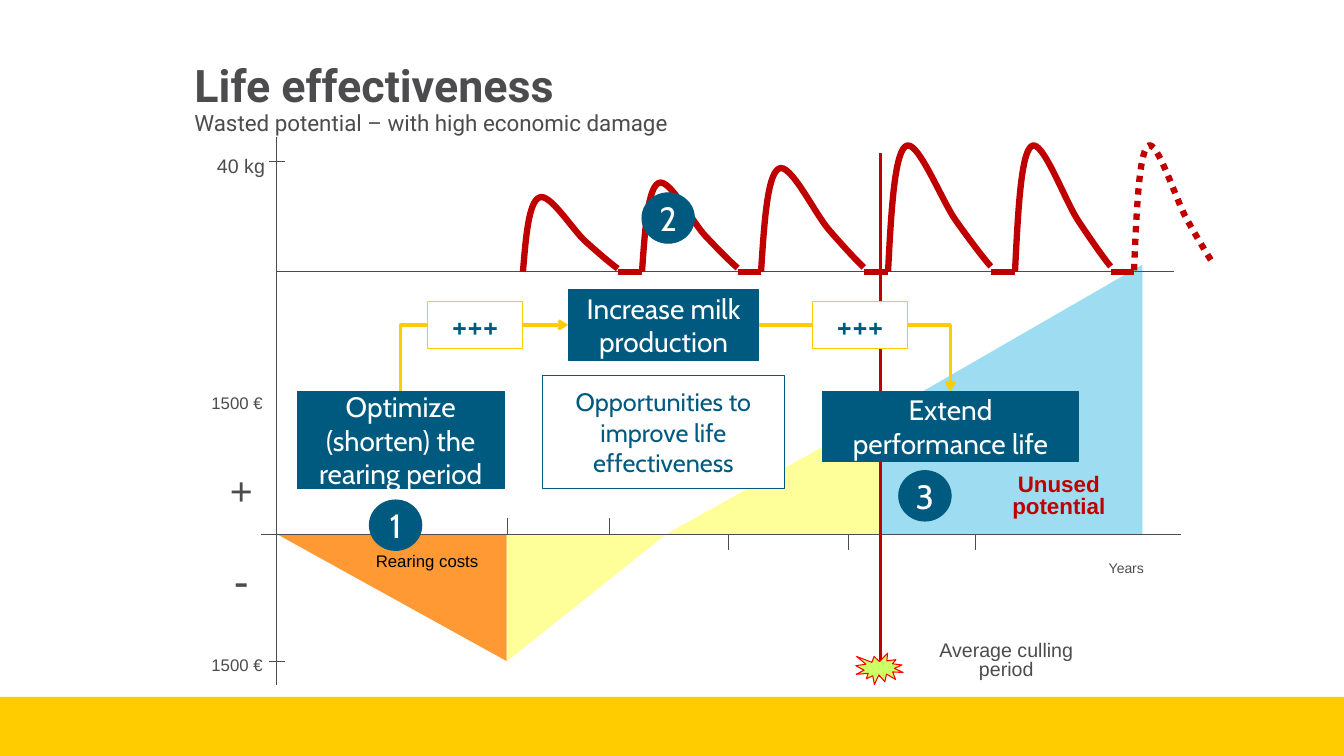
"""Build the life effectiveness slide for dairy cows."""
from lxml.etree import SubElement
from pptx import Presentation
from pptx.dml.color import RGBColor
from pptx.enum.dml import MSO_LINE as Dash
from pptx.enum.shapes import MSO_CONNECTOR as Link, MSO_SHAPE as Shape
from pptx.enum.text import MSO_ANCHOR as Anchor, PP_ALIGN as Align
from pptx.oxml.ns import qn
from pptx.util import Cm, Pt

GREY, RED, BLUE, GOLD, WHITE = "4C4C4E", "C00000", "005A7F", "FFCC00", "FFFFFF"
rgb = RGBColor.from_string

deck = Presentation()
deck.slide_width, deck.slide_height = Cm(33.87), Cm(19.05)
page = deck.slides.add_slide(deck.slide_layouts[6])


def write(shape, text, size, color, font="Arial", bold=False, align=Align.CENTER,
          anchor=Anchor.TOP, spacing=None):
    frame = shape.text_frame
    frame.word_wrap = True
    frame.vertical_anchor = anchor
    para = frame.paragraphs[0]
    para.alignment, para.line_spacing = align, spacing
    span = para.add_run()
    span.text = text
    span.font.name, span.font.size, span.font.bold = font, Pt(size), bold
    span.font.color.rgb = rgb(color)
    return para


def draw_line(x1, y1, x2, y2, color=GREY, width=0.75, kind=Link.STRAIGHT):
    line = page.shapes.add_connector(kind, Cm(x1), Cm(y1), Cm(x2), Cm(y2))
    line.line.color.rgb, line.line.width = rgb(color), Pt(width)
    SubElement(line._element.spPr, qn("a:effectLst"))
    return line


milk_axis, money_axis, left_axis = 6.85, 13.46, 6.98

band = page.shapes.add_shape(Shape.RECTANGLE, 0, Cm(17.56), Cm(33.87), Cm(1.49))
band.shadow.inherit = False
band.fill.solid()
band.fill.fore_color.rgb = rgb(GOLD)
band.line.fill.background()

draw_line(left_axis, 3.45, left_axis, 17.25)
draw_line(left_axis, money_axis, 29.77, money_axis)
for x in (9.98, 12.78, 15.37, 18.37, 21.39, 24.59):
    draw_line(x, 13.06, x, 13.87)

for x, y, width, height, turn, color in (
    (6.98, 13.46, 5.79, 3.2, 180, "FF9933"),
    (13.18, 13.06, 3.2, 4.01, 90, "FFFF99"),
    (19.48, 4.17, 6.81, 11.81, 270, "9EDCF1"),
    (17.98, 9.27, 3, 5.38, 270, "FFFF99"),
):
    area = page.shapes.add_shape(Shape.RIGHT_TRIANGLE, Cm(x), Cm(y), Cm(width), Cm(height))
    area.rotation = turn
    area.shadow.inherit = False
    area.fill.solid()
    area.fill.fore_color.rgb = rgb(color)
    area.line.fill.background()

draw_line(left_axis, milk_axis, 29.58, milk_axis)
draw_line(6.58, money_axis, 29.77, money_axis)
for y in (4.06, 16.66):
    draw_line(6.78, y, 7.17, y)

profile = [(0.03, 0.43), (0.06, 0.87), (0.17, 0.93), (0.28, 1),
           (0.52, 0.53), (0.66, 0.38), (0.8, 0.23), (0.94, 0.09), (1, 0.04)]
lactations = [(13.18, 2.39, 2.01), (16.18, 2.41, 2.4), (19.18, 2.59, 2.79),
              (22.38, 2.59, 3.4), (25.58, 2.41, 3.4), (28.58, 2.02, 3.36)]
for x, width, height in lactations:
    last = x == lactations[-1][0]
    base = 6.81 if last else milk_axis
    builder = page.shapes.build_freeform(Cm(x), Cm(base))
    builder.add_line_segments([(Cm(x + width * along), Cm(base - height * up))
                               for along, up in profile], close=False)
    curve = builder.convert_to_shape()
    outline = next(curve._element.iter(qn("a:path")))
    segments = outline.findall(qn("a:lnTo"))
    for first in range(0, len(segments), 3):
        bezier = SubElement(outline, qn("a:cubicBezTo"))
        for segment in segments[first:first + 3]:
            bezier.append(segment[0])
            outline.remove(segment)
    curve.shadow.inherit = False
    curve.fill.background()
    curve.line.color.rgb, curve.line.width = rgb(RED), Pt(4.5)
    if last:
        curve.line.dash_style = Dash.ROUND_DOT

for (x, width, height), following in zip(lactations, lactations[1:]):
    draw_line(x + width, milk_axis, following[0], milk_axis, RED, 4.5)
draw_line(22.18, 3.86, 22.18, 17.07, RED, 2.25)

for text, x, y, width, height, size, color in (
    ("Years", 27.18, 14.06, 2.41, 0.61, 10, GREY),
    ("Unused potential", 24.69, 11.86, 3.99, 1.35, 16, RED),
    ("+", 5.38, 11.86, 1.4, 1.19, 28, GREY),
    ("-", 5.38, 14.06, 1.4, 1.35, 32, GREY),
    ("40 kg", 4.88, 3.86, 2.39, 0.74, 14, GREY),
    ("Average culling period", 22.96, 16.06, 4.8, 1.22, 14, GREY),
    ("Rearing costs", 8.77, 13.86, 3.99, 0.66, 12, "000000"),
    ("1500 €", 4.87, 16.46, 2.21, 0.66, 12, GREY),
    ("1500 €", 4.87, 9.86, 2.21, 0.66, 12, GREY),
):
    label = page.shapes.add_textbox(Cm(x), Cm(y), Cm(width), Cm(height))
    write(label, text, size, color, bold=color == RED, spacing=0.8)

for ends, turn in (((13.05, 11.14, 11.37, 6.92), 90), ((19.13, 8.19, 23.95, 9.86), 0)):
    arrow = draw_line(*ends, GOLD, 2.25, Link.ELBOW)
    properties = arrow._element.spPr
    properties.find(qn("a:prstGeom")).set("prst", "bentConnector2")
    properties.find(qn("a:xfrm")).set("rot", str(turn * 60000))
    SubElement(arrow.line._get_or_add_ln(), qn("a:tailEnd"), type="arrow")

for kind, text, x, y, width, height, size, fill, outline, color in (
    (Shape.EXPLOSION1, "", 21.57, 16.46, 1.19, 0.79, 12, "CCFF66", "FF0000", GREY),
    (Shape.RECTANGLE, "Opportunities to improve life effectiveness",
     13.67, 9.46, 6.1, 2.86, 18, WHITE, BLUE, BLUE),
    (Shape.RECTANGLE, "Optimize (shorten) the rearing period",
     7.49, 9.86, 5.22, 2.46, 20, BLUE, BLUE, WHITE),
    (Shape.OVAL, "1", 9.31, 12.6, 1.32, 1.27, 24, BLUE, BLUE, WHITE),
    (Shape.RECTANGLE, "Increase milk production",
     14.33, 7.3, 4.79, 1.78, 20, BLUE, BLUE, WHITE),
    (Shape.OVAL, "2", 16.18, 4.86, 1.32, 1.27, 24, BLUE, BLUE, WHITE),
    (Shape.RECTANGLE, "Extend performance life",
     20.73, 9.86, 6.45, 1.78, 20, BLUE, BLUE, WHITE),
    (Shape.OVAL, "3", 22.65, 11.86, 1.32, 1.27, 24, BLUE, BLUE, WHITE),
    (Shape.RECTANGLE, "+++", 10.77, 7.59, 2.41, 1.19, 24, WHITE, GOLD, BLUE),
    (Shape.RECTANGLE, "+++", 20.47, 7.59, 2.41, 1.19, 24, WHITE, GOLD, BLUE),
):
    box = page.shapes.add_shape(kind, Cm(x), Cm(y), Cm(width), Cm(height))
    box.shadow.inherit = False
    box.fill.solid()
    box.fill.fore_color.rgb = rgb(fill)
    box.line.color.rgb, box.line.width = rgb(outline), Pt(0.75)
    if kind == Shape.OVAL:
        box.text_frame.margin_left = box.text_frame.margin_right = 0
    if text:
        write(box, text, size, color, font="Cabin", anchor=Anchor.MIDDLE)

title = page.shapes.add_textbox(Cm(4.65), Cm(0.94), Cm(24), Cm(3.18))
heading = write(title, "Life effectiveness", 32, GREY, font="Roboto", bold=True,
                align=Align.LEFT, anchor=Anchor.MIDDLE, spacing=0.9)
heading.add_line_break()
subtitle = heading.add_run()
subtitle.text = "Wasted potential – with high economic damage"
subtitle.font.name, subtitle.font.size = "Roboto", Pt(16)
subtitle.font.color.rgb = rgb(GREY)

deck.save("out.pptx")
